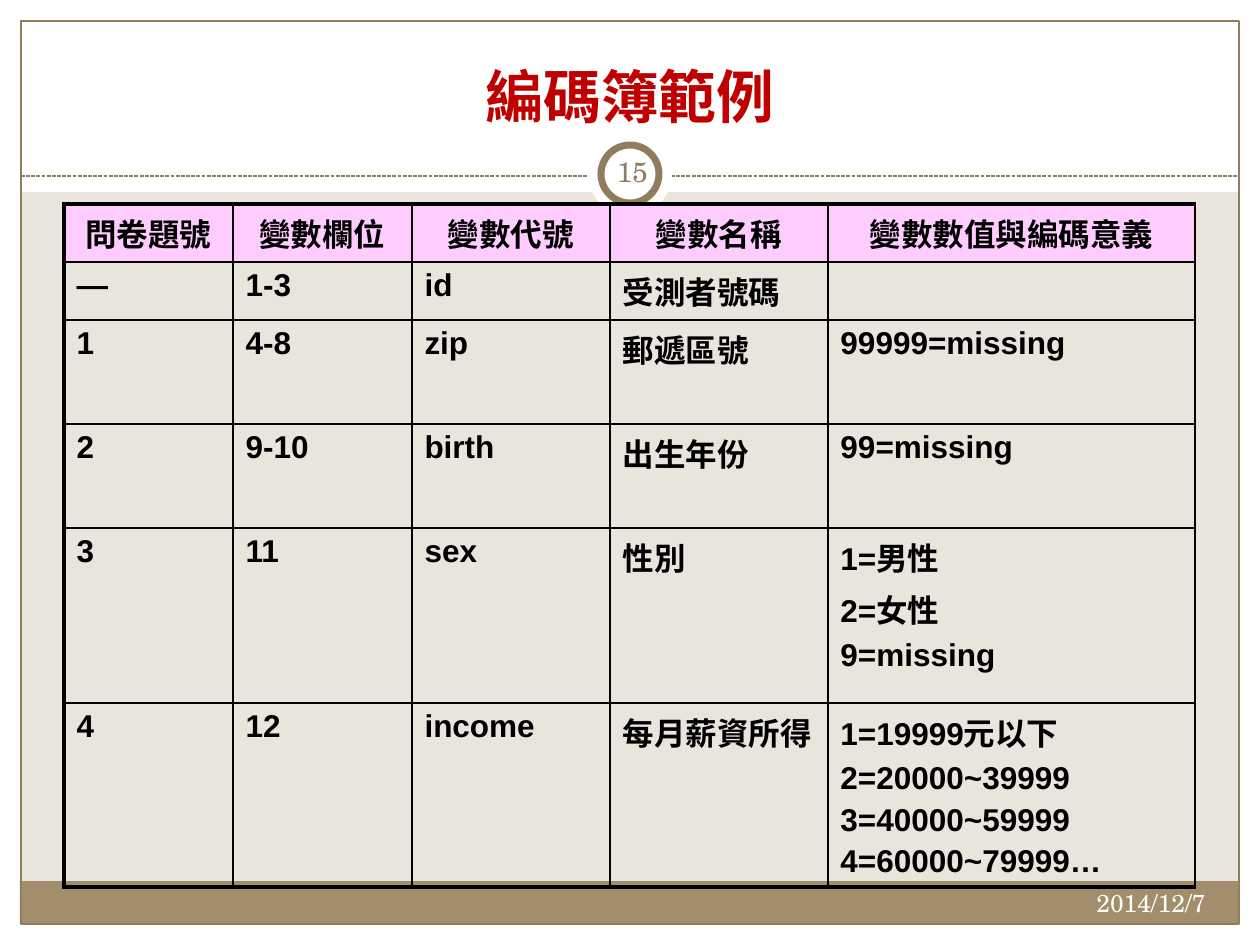
from dataclasses import dataclass

import pptx
import pptx.dml.color
import pptx.enum.dml
import pptx.enum.shapes
import pptx.enum.text
import pptx.oxml
import pptx.oxml.ns
import pptx.util

PX_PER_INCH = 126
WIDTH, HEIGHT, MARGIN = 1260, 945, 21
SERIF, SANS = "TeX Gyre Schola", "Arial"
COLORS = {
    "background": "E9E5DC", "white": "FFFFFF", "bar": "A28E6A", "frame": "8F7D5E",
    "title": "C00000", "header": "FFCCFF", "black": "000000",
}
PP_ALIGN = pptx.enum.text.PP_ALIGN
ANCHOR = pptx.enum.text.MSO_ANCHOR
SHAPE = pptx.enum.shapes.MSO_SHAPE

COLUMN_WIDTHS = (169, 179, 198, 218, 367)
ROW_HEIGHTS = (58, 58, 104, 104, 175, 184)
ROWS = (
    ("問卷題號", "變數欄位", "變數代號", "變數名稱", "變數數值與編碼意義"),
    ("—", "1-3", "id", "受測者號碼", ""),
    ("1", "4-8", "zip", "郵遞區號", "99999=missing"),
    ("2", "9-10", "birth", "出生年份", "99=missing"),
    ("3", "11", "sex", "性別", "1=男性\n2=女性\n9=missing"),
    ("4", "12", "income", "每月薪資所得",
     "1=19999元以下\n2=20000~39999\n3=40000~59999\n4=60000~79999…"),
)


@dataclass(frozen=True)
class Box:
    x: int
    y: int
    w: int
    h: int

    def emu(self) -> tuple:
        return px(self.x), px(self.y), px(self.w), px(self.h)


@dataclass(frozen=True)
class Decoration:
    box: Box
    fill: str | None = None
    line: str | None = None
    line_pt: float = 0.75
    kind: SHAPE = SHAPE.RECTANGLE


@dataclass(frozen=True)
class Label:
    text: str
    box: Box
    size: int
    color: str
    align: PP_ALIGN
    anchor: ANCHOR = ANCHOR.TOP
    side_inset: float = 0.1


PANELS = (
    Decoration(Box(0, HEIGHT - MARGIN, WIDTH, MARGIN), "white"),
    Decoration(Box(0, 0, WIDTH, 192), "white"),
    Decoration(Box(0, 0, MARGIN, HEIGHT), "white"),
    Decoration(Box(WIDTH - MARGIN, 0, MARGIN, HEIGHT), "white"),
    Decoration(Box(20, 881, 1218, 43), "bar"),
    Decoration(Box(MARGIN, MARGIN, WIDTH - 2 * MARGIN, HEIGHT - 2 * MARGIN), line="frame"),
)
BADGE = (
    Decoration(Box(588, 132, 84, 84), "white", kind=SHAPE.OVAL),
    Decoration(Box(601, 145, 58, 58), "white", "frame", 4, SHAPE.OVAL),
)
LABELS = (
    Label("2014/12/7", Box(798, 882, 420, 50), 14, "white", PP_ALIGN.RIGHT),
    Label("15", Box(601, 141, 63, 60), 16, "frame", PP_ALIGN.CENTER, ANCHOR.MIDDLE, 0.05),
)


def px(n: int) -> pptx.util.Emu:
    return pptx.util.Emu(round(n * 914400 / PX_PER_INCH))


def rgb(name: str) -> pptx.dml.color.RGBColor:
    return pptx.dml.color.RGBColor.from_string(COLORS[name])


def format_paragraph(p, name: str, size: int, color: str, align, bold: bool = False) -> None:
    p.alignment = align
    p.font.name, p.font.size, p.font.bold = name, pptx.util.Pt(size), bold
    p.font.color.rgb = rgb(color)


def draw_decoration(s, item: Decoration) -> None:
    sp = s.shapes.add_shape(item.kind, *item.box.emu())
    sp.shadow.inherit = False
    if item.fill:
        sp.fill.solid()
        sp.fill.fore_color.rgb = rgb(item.fill)
    else:
        sp.fill.background()
    if item.line:
        sp.line.color.rgb = rgb(item.line)
        sp.line.width = pptx.util.Pt(item.line_pt)
    else:
        sp.line.fill.background()


def draw_divider(s, y: int) -> None:
    line = s.shapes.add_connector(pptx.enum.shapes.MSO_CONNECTOR.STRAIGHT,
                                  px(MARGIN), px(y), px(WIDTH - MARGIN), px(y))
    line.line.color.rgb = rgb("frame")
    line.line.width = pptx.util.Pt(0.75)
    line.line.dash_style = pptx.enum.dml.MSO_LINE.SQUARE_DOT
    line.element.spPr.append(pptx.oxml.parse_xml(
        f"<a:effectLst {pptx.oxml.ns.nsdecls('a')}/>"))


def draw_title(s, text: str, box: Box) -> None:
    sp = s.shapes.title
    sp.left, sp.top, sp.width, sp.height = box.emu()
    tf = sp.text_frame
    tf.text = text
    tf.vertical_anchor = ANCHOR.BOTTOM
    format_paragraph(tf.paragraphs[0], SERIF, 33, "title", PP_ALIGN.CENTER, bold=True)
    sp.element.getparent().append(sp.element)  # in front of the white panels


def draw_label(s, label: Label) -> None:
    tf = s.shapes.add_textbox(*label.box.emu()).text_frame
    tf.word_wrap = True
    tf.vertical_anchor = label.anchor
    tf.margin_left = tf.margin_right = pptx.util.Inches(label.side_inset)
    tf.text = label.text
    format_paragraph(tf.paragraphs[0], SERIF, label.size, label.color, label.align)


def set_borders(cell, widths: dict[str, float]) -> None:
    """Add borders, given in points by side (L, R, T, B in that order)."""
    tcPr = cell._tc.get_or_add_tcPr()
    for side, width in widths.items():
        tcPr.append(pptx.oxml.parse_xml(
            f'<a:ln{side} {pptx.oxml.ns.nsdecls("a")} w="{pptx.util.Pt(width)}">'
            f'<a:solidFill><a:srgbClr val="{COLORS["black"]}"/></a:solidFill></a:ln{side}>'))


def draw_table(s, x: int, y: int) -> None:
    box = Box(x, y, sum(COLUMN_WIDTHS), sum(ROW_HEIGHTS))
    table = s.shapes.add_table(len(ROWS), len(COLUMN_WIDTHS), *box.emu()).table
    table.first_row = table.horz_banding = False
    for column, width in zip(table.columns, COLUMN_WIDTHS):
        column.width = px(width)
    for i, (row, height) in enumerate(zip(ROWS, ROW_HEIGHTS)):
        table.rows[i].height = px(height)
        is_header = i == 0
        for j, text in enumerate(row):
            cell = table.cell(i, j)
            set_borders(cell, {
                "L": 2.25 if j == 0 else 1, "R": 1,
                "T": 2.25 if is_header else 1,
                "B": 2.25 if i == len(ROWS) - 1 else 1,
            })
            if is_header:
                cell.fill.solid()
                cell.fill.fore_color.rgb = rgb("header")
            else:
                cell.fill.background()
            cell.text_frame.text = text
            for p in cell.text_frame.paragraphs:
                format_paragraph(p, SANS, 18, "black",
                                 PP_ALIGN.CENTER if is_header else PP_ALIGN.LEFT, bold=True)
                p.space_before = pptx.util.Pt(3.6)


def main() -> None:
    prs = pptx.Presentation()
    prs.slide_width, prs.slide_height = px(WIDTH), px(HEIGHT)
    s = prs.slides.add_slide(prs.slide_layouts.get_by_name("Title Only"))
    s.background.fill.solid()
    s.background.fill.fore_color.rgb = rgb("background")
    for panel in PANELS:
        draw_decoration(s, panel)
    draw_divider(s, 176)
    for ring in BADGE:
        draw_decoration(s, ring)
    draw_title(s, "編碼簿範例", Box(42, 32, 1176, 104))
    for label in LABELS:
        draw_label(s, label)
    draw_table(s, 64, 204)
    prs.save("out.pptx")


if __name__ == "__main__":
    main()
